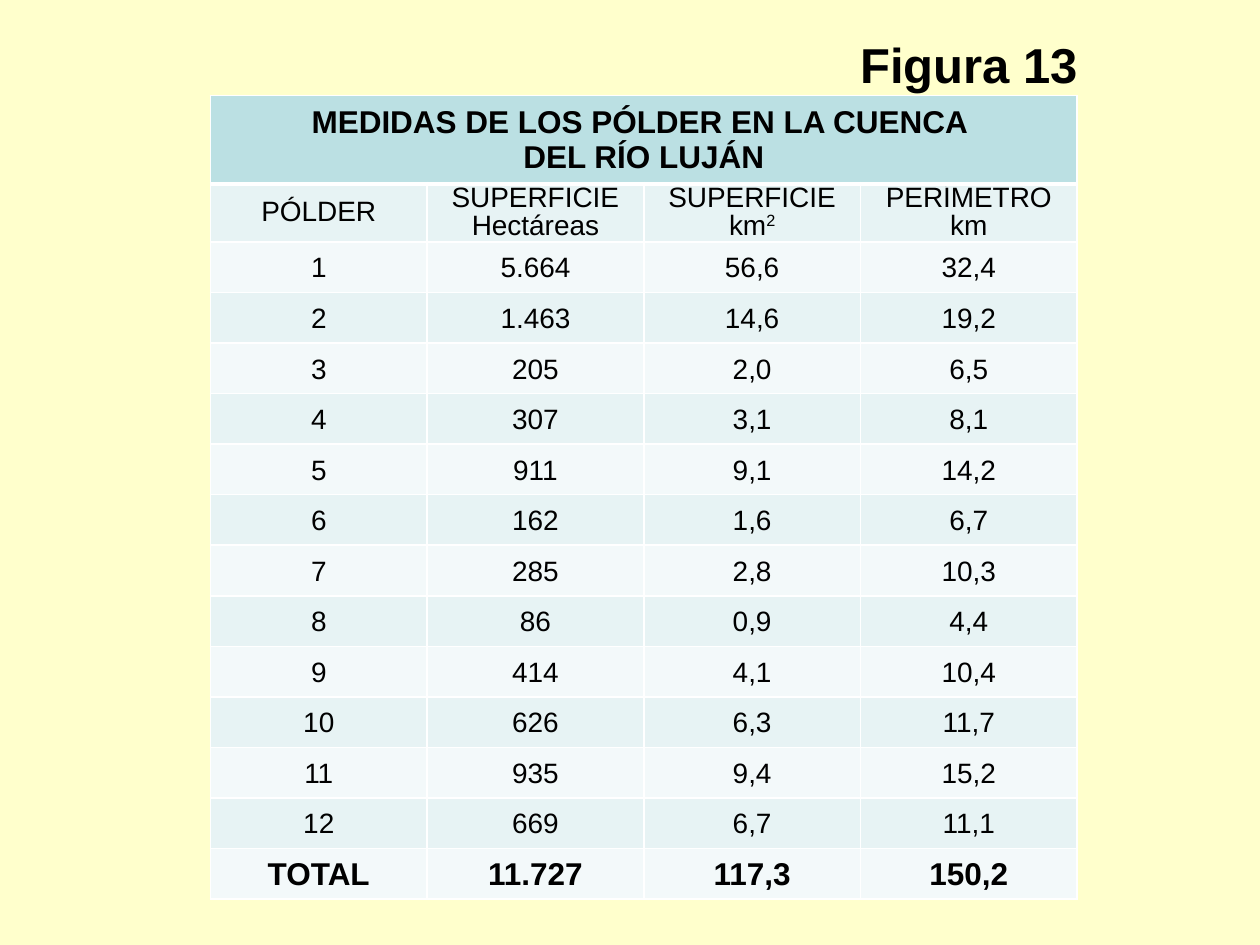
from lxml import etree
from pptx import Presentation, util as u
from pptx.dml.color import RGBColor
from pptx.enum import text
from pptx.oxml import ns

CREAM = RGBColor(0xFF, 0xFF, 0xCC)
BLACK = RGBColor(0, 0, 0)
WHITE = RGBColor(0xFF, 0xFF, 0xFF)
AQUA = RGBColor(0xBB, 0xE0, 0xE3)
AQUA_LIGHT = RGBColor(0xE7, 0xF3, 0xF4)
AQUA_PALE = RGBColor(0xF3, 0xF9, 0xFA)

# Lines within a cell are separated by "\n"; "^" starts a superscript
CAPTION = "MEDIDAS DE LOS PÓLDER EN LA CUENCA \nDEL RÍO LUJÁN"
HEADINGS = ["PÓLDER", "SUPERFICIE\nHectáreas", "SUPERFICIE\nkm^2", "PERÍMETRO\nkm"]
POLDERS = [
    ["1", "5.664", "56,6", "32,4"],
    ["2", "1.463", "14,6", "19,2"],
    ["3", "205", "2,0", "6,5"],
    ["4", "307", "3,1", "8,1"],
    ["5", "911", "9,1", "14,2"],
    ["6", "162", "1,6", "6,7"],
    ["7", "285", "2,8", "10,3"],
    ["8", "86", "0,9", "4,4"],
    ["9", "414", "4,1", "10,4"],
    ["10", "626", "6,3", "11,7"],
    ["11", "935", "9,4", "15,2"],
    ["12", "669", "6,7", "11,1"],
]
TOTAL = ["TOTAL", "11.727", "117,3", "150,2"]


def apply(target, values):
    for name, value in values.items():
        setattr(target, name, value)


class PolderSlide:
    font = "Arial"
    tight = {"margin_left": u.Inches(0.07), "margin_right": u.Inches(0.07),
             "margin_top": 0, "margin_bottom": 0}

    def __init__(self, deck):
        self.slide = deck.slides.add_slide(deck.slide_layouts[5])
        self.slide.background.fill.solid()
        self.slide.background.fill.fore_color.rgb = CREAM

    def lines(self, frame, content, size, bold, **paragraph_format):
        for i, line in enumerate(content.split("\n")):
            paragraph = frame.add_paragraph() if i else frame.paragraphs[0]
            apply(paragraph, paragraph_format)
            for level, part in enumerate(line.split("^")):
                run = paragraph.add_run()
                run.text = part
                apply(run.font, {"name": self.font, "size": u.Pt(size), "bold": bold})
                run.font.color.rgb = BLACK
                if level:
                    run.font._element.set("baseline", "30000")

    def title(self, content, left, top, width, height):
        title = self.slide.shapes.title
        apply(title, {"left": u.Inches(left), "top": u.Inches(top),
                      "width": u.Inches(width), "height": u.Inches(height)})
        apply(title.text_frame, {"vertical_anchor": text.MSO_ANCHOR.TOP, "word_wrap": True,
                                 "auto_size": text.MSO_AUTO_SIZE.SHAPE_TO_FIT_TEXT})
        self.lines(title.text_frame, content, 28, True, alignment=text.PP_ALIGN.LEFT)

    def borders(self, cell, **widths):
        properties = cell._tc.get_or_add_tcPr()
        for side in "LRTB":
            line = etree.SubElement(properties, ns.qn(f"a:ln{side}"),
                                    w=str(u.Pt(widths.get(side, 1))))
            fill = etree.SubElement(line, ns.qn("a:solidFill"))
            etree.SubElement(fill, ns.qn("a:srgbClr"), val=str(WHITE))

    def cell(self, cell, content, fill, size=16, bold=False, spacing=1.07, margins=None, **widths):
        self.borders(cell, **widths)
        cell.fill.solid()
        cell.fill.fore_color.rgb = fill
        apply(cell, {"vertical_anchor": text.MSO_ANCHOR.MIDDLE, **(margins or {})})
        self.lines(cell.text_frame, content, size, bold,
                   alignment=text.PP_ALIGN.CENTER, line_spacing=spacing)

    def table(self, left, top, width, height, caption_height, heading_height):
        rows = [HEADINGS, *POLDERS, TOTAL]
        table = self.slide.shapes.add_table(
            len(rows) + 1, len(HEADINGS), u.Inches(left), u.Inches(top),
            u.Inches(width), u.Inches(height)).table
        body_height = (height - caption_height - heading_height) / (len(rows) - 1)
        heights = [caption_height, heading_height] + [body_height] * (len(rows) - 1)
        for row, row_height in zip(table.rows, heights):
            row.height = u.Inches(row_height)

        # Caption across all columns
        table.cell(0, 0).merge(table.cell(0, len(HEADINGS) - 1))
        self.cell(table.cell(0, 0), CAPTION, AQUA, 18, True, 1.0, B=3)

        # Headings, polders and total in alternating bands
        for r, values in enumerate(rows, start=1):
            style = {"fill": AQUA_LIGHT if r % 2 else AQUA_PALE, "margins": self.tight}
            if values is HEADINGS:
                style.update(spacing=u.Pt(16), T=3)
            elif values is TOTAL:
                style.update(size=18, bold=True)
            for c, value in enumerate(values):
                self.cell(table.cell(r, c), value, **style)


def main():
    deck = Presentation()
    apply(deck, {"slide_width": u.Inches(10), "slide_height": u.Inches(7.5)})
    page = PolderSlide(deck)
    page.title("Figura 13", 6.73, 0.22, 2.95, 0.57)
    page.table(1.67, 0.76, 6.88, 6.33, caption_height=0.65, heading_height=0.46)
    deck.save("out.pptx")


if __name__ == "__main__":
    main()
